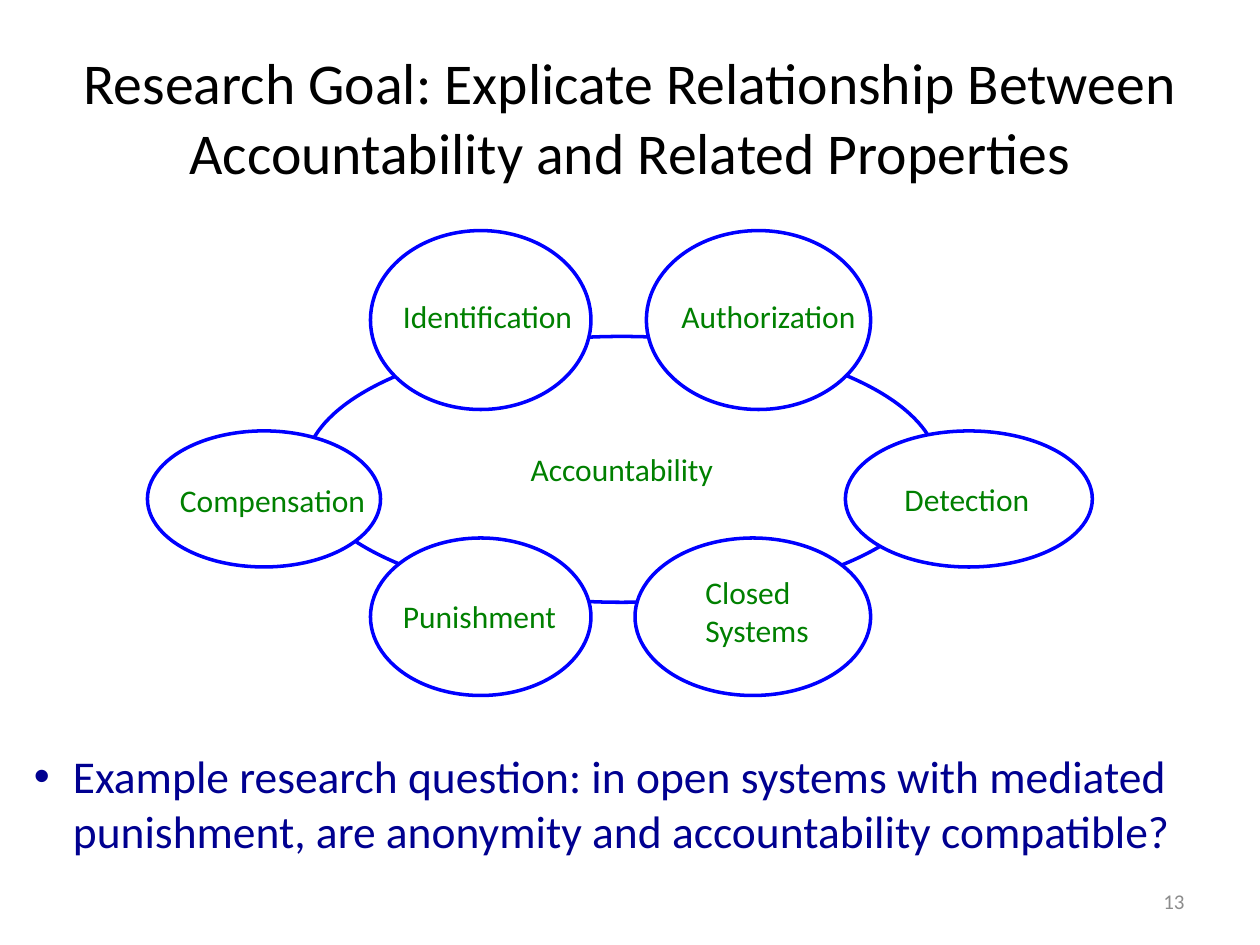
from lxml import etree
from pptx import Presentation
from pptx import util as u
from pptx.dml.color import RGBColor
from pptx.enum import shapes, text
from pptx.oxml.ns import qn

FONT = "Calibri"
BLACK, WHITE, GREY = "000000", "FFFFFF", "8C8C8C"
BLUE, NAVY, GREEN = "0000FF", "000090", "008000"

# Rows and columns of the ring: (start, size) in inches
TOP, MIDDLE, BOTTOM = (1.83, 1.42), (3.42, 1.08), (4.27, 1.25)
LEFT_COLUMN = (2.94, 1.75)

# Column, row, label text, label box
PROPERTIES = [
    ((1.17, 1.85), MIDDLE, "Compensation", (1.33, 3.77, 1.69, 0.4)),
    ((5.04, 1.87), BOTTOM, "Closed\nSystems", (5.5, 4.5, 1.04, 0.71)),
    (LEFT_COLUMN, TOP, "Identification", (3.1, 2.31, 1.56, 0.4)),
    ((5.13, 1.78), TOP, "Authorization", (5.31, 2.31, 1.6, 0.4)),
    (LEFT_COLUMN, BOTTOM, "Punishment", (3.1, 4.69, 1.43, 0.4)),
    ((6.71, 1.96), MIDDLE, "Detection", (7.08, 3.76, 1.21, 0.4)),
]


def color(hex_string):
    return RGBColor.from_string(hex_string)


def inches(box):
    return [u.Inches(length) for length in box]


def write(frame, words, size=18, ink=GREEN, align=text.PP_ALIGN.LEFT,
          anchor=text.MSO_ANCHOR.TOP, wrap=True, fit=text.MSO_AUTO_SIZE.NONE):
    frame.text = words
    frame.word_wrap = wrap
    frame.auto_size = fit
    frame.vertical_anchor = anchor
    for paragraph in frame.paragraphs:
        paragraph.alignment = align
        for run in paragraph.runs:
            run.font.name = FONT
            run.font.size = u.Pt(size)
            run.font.color.rgb = color(ink)


def add_label(slide, box, words, **style):
    label = slide.shapes.add_textbox(*inches(box))
    write(label.text_frame, words, **style)
    return label


def add_ellipse(slide, box):
    ellipse = slide.shapes.add_shape(shapes.MSO_SHAPE.OVAL, *inches(box))
    ellipse.shadow.inherit = False
    ellipse.fill.solid()
    ellipse.fill.fore_color.rgb = color(WHITE)
    ellipse.line.color.rgb = color(BLUE)
    ellipse.line.width = u.Pt(2)
    return ellipse


def add_bullet(paragraph, indent):
    properties = paragraph._p.get_or_add_pPr()
    properties.set("marL", str(u.Inches(indent)))
    properties.set("indent", str(-u.Inches(indent)))
    etree.SubElement(properties, qn("a:buFont")).set("typeface", "Arial")
    etree.SubElement(properties, qn("a:buChar")).set("char", "•")


def add_title(slide, box, words):
    title = slide.shapes.title
    title.left, title.top, title.width, title.height = inches(box)
    write(title.text_frame, words, size=33, ink=BLACK,
          align=text.PP_ALIGN.CENTER, anchor=text.MSO_ANCHOR.MIDDLE)


def main():
    deck = Presentation()
    deck.slide_width, deck.slide_height = inches((10, 7.5))
    slide = deck.slides.add_slide(deck.slide_layouts[5])

    add_title(slide, (0.5, 0.3, 9, 1.25),
              "Research Goal: Explicate Relationship Between "
              "Accountability and Related Properties")

    # Central concept
    accountability = add_ellipse(slide, (2.42, 2.67, 5.03, 2.11))
    write(accountability.text_frame, "Accountability",
          align=text.PP_ALIGN.CENTER, anchor=text.MSO_ANCHOR.MIDDLE)

    # Related properties around it, then their labels
    for (left, width), (top, height), _, _ in PROPERTIES:
        add_ellipse(slide, (left, top, width, height))
    for _, _, words, box in PROPERTIES:
        add_label(slide, box, words, wrap=False,
                  fit=text.MSO_AUTO_SIZE.SHAPE_TO_FIT_TEXT)

    # Research question
    question = add_label(slide, (0.17, 5.89, 9.58, 0.98),
                         "Example research question: in open systems with mediated "
                         "punishment, are anonymity and accountability compatible?",
                         size=26, ink=NAVY,
                         fit=text.MSO_AUTO_SIZE.SHAPE_TO_FIT_TEXT)
    add_bullet(question.text_frame.paragraphs[0], 0.31)

    # Slide number
    add_label(slide, (7.17, 6.95, 2.33, 0.4), "13", size=12, ink=GREY,
              align=text.PP_ALIGN.RIGHT, anchor=text.MSO_ANCHOR.MIDDLE)

    deck.save("out.pptx")


if __name__ == "__main__":
    main()
